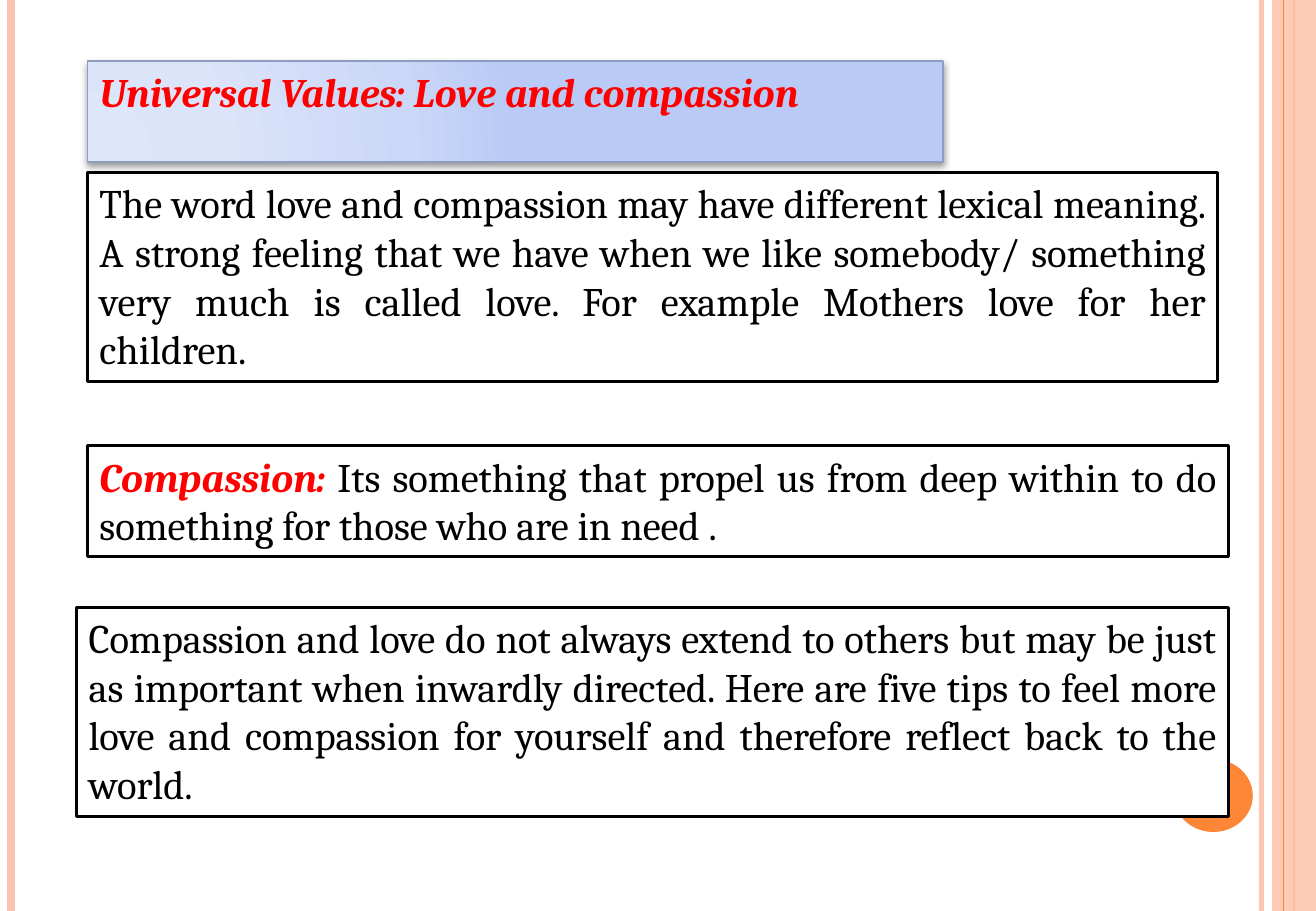
from dataclasses import dataclass

from lxml import etree
from pptx import Presentation
from pptx.dml.color import RGBColor
from pptx.enum.shapes import MSO_CONNECTOR, MSO_SHAPE
from pptx.enum.text import MSO_ANCHOR, MSO_AUTO_SIZE, PP_ALIGN
from pptx.oxml import parse_xml
from pptx.oxml.ns import qn
from pptx.util import Inches, Pt

DRAWING_NS = 'xmlns:a="http://schemas.openxmlformats.org/drawingml/2006/main"'


@dataclass(frozen=True)
class Theme:
    font: str = "Cambria"
    text_size: float = 24
    box_line: float = 2
    title_line: float = 1
    white: str = "FFFFFF"
    black: str = "000000"
    red: str = "FF0000"
    peach: str = "FEC3AE"
    orange: str = "FE8637"
    title_border: str = "8D9CBF"
    title_stops: tuple = ((0, "DEE6FA"), (30, "DBE4F9"), (75, "CAD7F7"), (100, "B8CAF5"))


THEME = Theme()


def rgb(value):
    return RGBColor.from_string(value)


def place(shape, box):
    shape.left, shape.top, shape.width, shape.height = (Inches(v) for v in box)


def set_alpha(fill_owner, percent):
    color = fill_owner.find(".//" + qn("a:srgbClr"))
    etree.SubElement(color, qn("a:alpha")).set("val", str(percent * 1000))


def set_outline(shape, color, width):
    shape.line.color.rgb = rgb(color)
    shape.line.width = Pt(width)


def add_plain_shape(slide, kind, box, color):
    shape = slide.shapes.add_shape(kind, *(Inches(v) for v in box))
    shape.shadow.inherit = False
    shape.fill.solid()
    shape.fill.fore_color.rgb = rgb(color)
    shape.line.fill.background()
    return shape


def write_text(shape, parts, align):
    """Fill the shape with one paragraph of (text, is_highlighted) parts."""
    frame = shape.text_frame
    frame.word_wrap = True
    frame.auto_size = MSO_AUTO_SIZE.SHAPE_TO_FIT_TEXT
    frame.vertical_anchor = MSO_ANCHOR.TOP
    paragraph = frame.paragraphs[0]
    paragraph.alignment = align
    for text, highlighted in parts:
        run = paragraph.add_run()
        run.text = text
        run.font.name = THEME.font
        run.font.size = Pt(THEME.text_size)
        run.font.bold = run.font.italic = highlighted
        run.font.color.rgb = rgb(THEME.red if highlighted else THEME.black)


def add_stripe(slide, x, height, color, width, alpha=None):
    stripe = slide.shapes.add_connector(
        MSO_CONNECTOR.STRAIGHT, Inches(x), Inches(0), Inches(x), Inches(height))
    set_outline(stripe, color, width)
    properties = stripe._element.spPr
    etree.SubElement(properties, qn("a:effectLst"))
    if alpha:
        set_alpha(properties, alpha)


def add_side_decoration(slide, box):
    left, top, width, height = box
    right = left + width
    # Stripes and band along both edges
    add_stripe(slide, right - 0.45, height, THEME.peach, 3, alpha=93)
    add_stripe(slide, left + 0.09, height, THEME.peach, 4.5)
    add_stripe(slide, right - 0.18, height, THEME.orange, 1.5)
    band = add_plain_shape(slide, MSO_SHAPE.RECTANGLE,
                           (right - 0.36, top, 0.36, height), THEME.peach)
    set_alpha(band._element.spPr, 87)
    add_stripe(slide, right - 0.27, height, THEME.orange, 0.75)
    # Page-number disc
    add_plain_shape(slide, MSO_SHAPE.OVAL,
                    (right - 1.17, top + 6.25, 0.65, 0.6), THEME.orange)


def format_title(slide, box, text):
    title = slide.shapes.title
    place(title, box)
    title.fill.solid()
    set_outline(title, THEME.title_border, THEME.title_line)
    title.shadow.inherit = False
    write_text(title, [(text, True)], PP_ALIGN.LEFT)
    # Radial gradient
    properties = title._element.spPr
    stops = "".join(f'<a:gs pos="{pos * 1000}"><a:srgbClr val="{color}"/></a:gs>'
                    for pos, color in THEME.title_stops)
    gradient = parse_xml(
        f'<a:gradFill {DRAWING_NS} rotWithShape="1"><a:gsLst>{stops}</a:gsLst>'
        '<a:path path="circle"><a:fillToRect l="5000" t="100000" r="120000" b="10000"/>'
        '</a:path></a:gradFill>')
    properties.replace(properties.find(qn("a:solidFill")), gradient)
    # Soft shadow below
    properties.find(qn("a:effectLst")).append(parse_xml(
        f'<a:outerShdw {DRAWING_NS} blurRad="{Pt(4)}" dist="{Pt(2)}" dir="5400000" '
        f'rotWithShape="0"><a:srgbClr val="{THEME.black}"><a:alpha val="40000"/>'
        '</a:srgbClr></a:outerShdw>'))


def add_statement(slide, box, parts):
    statement = add_plain_shape(slide, MSO_SHAPE.RECTANGLE, box, THEME.white)
    set_outline(statement, THEME.black, THEME.box_line)
    write_text(statement, parts, PP_ALIGN.JUSTIFY)


STATEMENTS = [
    ((0.72, 1.42, 9.3, 1.72), [
        ("The word love and compassion may have different lexical meaning. "
         "A strong feeling that we have when we like somebody/ something very much "
         "is called love. For example Mothers love for her children.", False)]),
    ((0.72, 3.67, 9.39, 0.91), [
        ("Compassion:", True),
        (" Its something that propel us from deep within to do something for those "
         "who are in need .", False)]),
    ((0.63, 5, 9.48, 1.72), [
        ("Compassion and love do not always extend to others but may be just as "
         "important when inwardly directed. Here are five tips to feel more love and "
         "compassion for yourself and therefore reflect back to the world.", False)]),
]


def main():
    width, height = 10.83, 7.5
    deck = Presentation()
    deck.slide_width, deck.slide_height = Inches(width), Inches(height)
    slide = deck.slides.add_slide(deck.slide_layouts[5])
    slide.background.fill.solid()
    slide.background.fill.fore_color.rgb = rgb(THEME.white)

    add_side_decoration(slide, (0, 0, width, height))
    format_title(slide, (0.72, 0.5, 7.04, 0.5), "Universal Values: Love and compassion")
    for box, parts in STATEMENTS:
        add_statement(slide, box, parts)
    deck.save("out.pptx")


if __name__ == "__main__":
    main()
